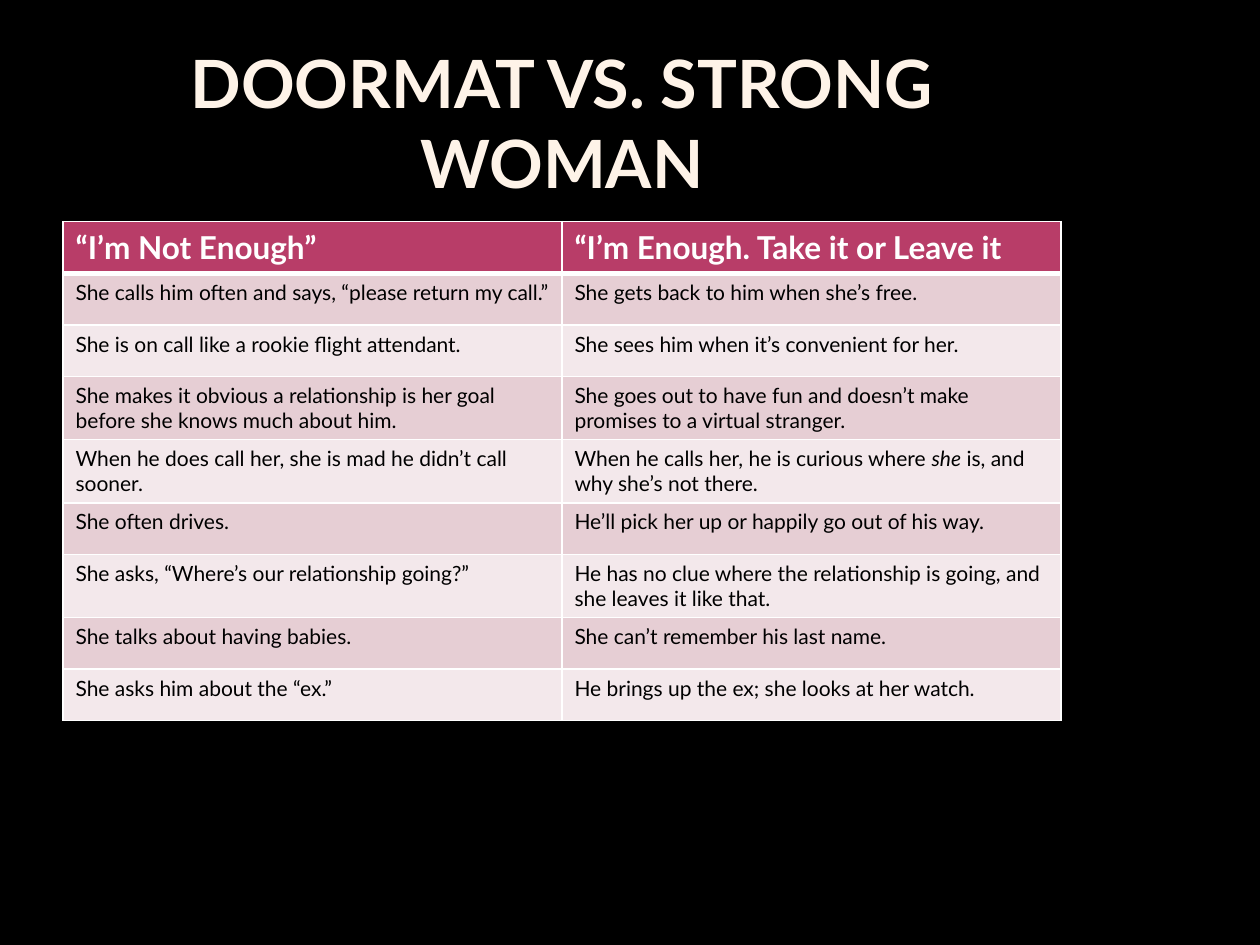
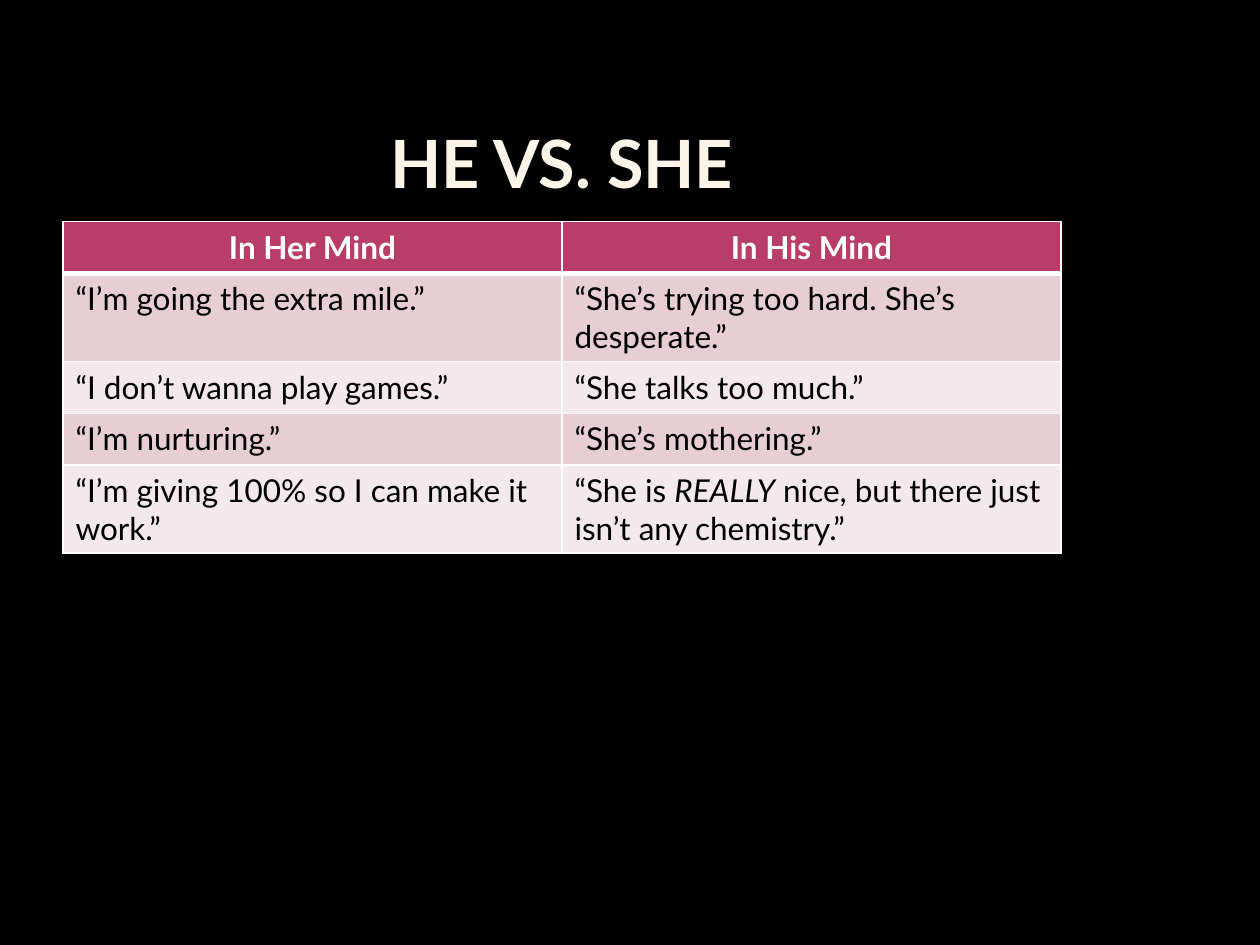
from lxml.etree import SubElement
from pptx import Presentation
from pptx.dml.color import RGBColor
from pptx.enum.text import MSO_ANCHOR, MSO_AUTO_SIZE, PP_ALIGN
from pptx.oxml.ns import qn
from pptx.util import Inches, Pt

COLORS = {
    "background": "000000",
    "title": "FEF3E8",
    "header": "B83D68",
    "header_text": "FFFFFF",
    "body_text": "000000",
    "odd_row": "E6CED4",
    "even_row": "F3E8EB",
    "border": "FFFFFF",
}
FONT = "Lato"
TITLE_ONLY = 5

# Boxes: left, top, width, height
TITLE_BOX = [Inches(n) for n in (0.5, 0.35, 7.92, 1.25)]
TABLE_BOX = [Inches(n) for n in (0.5, 1.76, 7.92, 0.41)]  # height of one row

# Asterisks enclose italic words
WOMAN_ROWS = [
    ("“I’m Not Enough”", "“I’m Enough. Take it or Leave it"),
    ("She calls him often and says, “please return my call.”",
     "She gets back to him when she’s free."),
    ("She is on call like a rookie flight attendant.",
     "She sees him when it’s convenient for her."),
    ("She makes it obvious a relationship is her goal before she knows much about him.",
     "She goes out to have fun and doesn’t make promises to a virtual stranger."),
    ("When he does call her, she is mad he didn’t call sooner.",
     "When he calls her, he is curious where *she* is, and why she’s not there."),
    ("She often drives.", "He’ll pick her up or happily go out of his way."),
    ("She asks, “Where’s our relationship going?”",
     "He has no clue where the relationship is going, and she leaves it like that."),
    ("She talks about having babies.", "She can’t remember his last name."),
    ("She asks him about the “ex.”", "He brings up the ex; she looks at her watch."),
]
MIND_ROWS = [
    ("In Her Mind", "In His Mind"),
    ("“I’m going the extra mile.”", "“She’s trying too hard. She’s desperate.”"),
    ("“I don’t wanna play games.”", "“She talks too much.”"),
    ("“I’m nurturing.”", "“She’s mothering.”"),
    ("“I’m giving 100% so I can make it work.”",
     "“She is *REALLY* nice, but there just isn’t any chemistry.”"),
]


def rgb(name):
    return RGBColor.from_string(COLORS[name])


def style_font(font, size, color, bold):
    font.name, font.size, font.bold = FONT, Pt(size), bold
    font.color.rgb = rgb(color)


def add_title(slide, box, wording):
    title = slide.shapes.title
    title.left, title.top, title.width, title.height = box
    frame = title.text_frame
    frame.text = wording
    frame.word_wrap, frame.auto_size = True, MSO_AUTO_SIZE.NONE
    frame.vertical_anchor = MSO_ANCHOR.BOTTOM
    frame.margin_left = frame.margin_right = Inches(0.05)
    frame.margin_top = frame.margin_bottom = 0
    heading = frame.paragraphs[0]
    heading.alignment = PP_ALIGN.CENTER
    style_font(heading.runs[0].font, 38, "title", True)


def add_borders(cell, top, bottom):
    properties = cell._tc.get_or_add_tcPr()
    for side, width in (("L", 1), ("R", 1), ("T", top), ("B", bottom)):
        line = SubElement(properties, qn(f"a:ln{side}"), w=str(Pt(width)))
        fill = SubElement(line, qn("a:solidFill"))
        SubElement(fill, qn("a:srgbClr"), val=COLORS["border"])


def fill_cell(cell, wording, row, body_size, header_align):
    # The rule under the header is heavier than the others
    add_borders(cell, top=3 if row == 1 else 1, bottom=3 if row == 0 else 1)
    is_header = row == 0
    band = "header" if is_header else "odd_row" if row % 2 else "even_row"
    cell.fill.solid()
    cell.fill.fore_color.rgb = rgb(band)

    paragraph = cell.text_frame.paragraphs[0]
    paragraph.alignment = header_align if is_header else PP_ALIGN.LEFT
    for index, part in enumerate(wording.split("*")):
        run = paragraph.add_run()
        run.text = part
        style_font(run.font, 18 if is_header else body_size,
                   "header_text" if is_header else "body_text", is_header)
        run.font.italic = index % 2 == 1


def add_comparison(slide, box, rows, body_size, header_align):
    left, top, width, row_height = box
    table = slide.shapes.add_table(len(rows), len(rows[0]), left, top, width,
                                   row_height * len(rows)).table
    for row, wordings in enumerate(rows):
        for column, wording in enumerate(wordings):
            fill_cell(table.cell(row, column), wording, row, body_size, header_align)


def add_comparison_slide(deck, title, rows, body_size, header_align):
    slide = deck.slides.add_slide(deck.slide_layouts[TITLE_ONLY])
    slide.background.fill.solid()
    slide.background.fill.fore_color.rgb = rgb("background")
    add_title(slide, TITLE_BOX, title)
    add_comparison(slide, TABLE_BOX, rows, body_size, header_align)


def main():
    deck = Presentation()
    deck.slide_width, deck.slide_height = Inches(10), Inches(7.5)
    add_comparison_slide(deck, "DOORMAT VS. STRONG WOMAN", WOMAN_ROWS, 12, PP_ALIGN.LEFT)
    add_comparison_slide(deck, "HE VS. SHE", MIND_ROWS, 18, PP_ALIGN.CENTER)
    deck.save("out.pptx")


if __name__ == "__main__":
    main()
